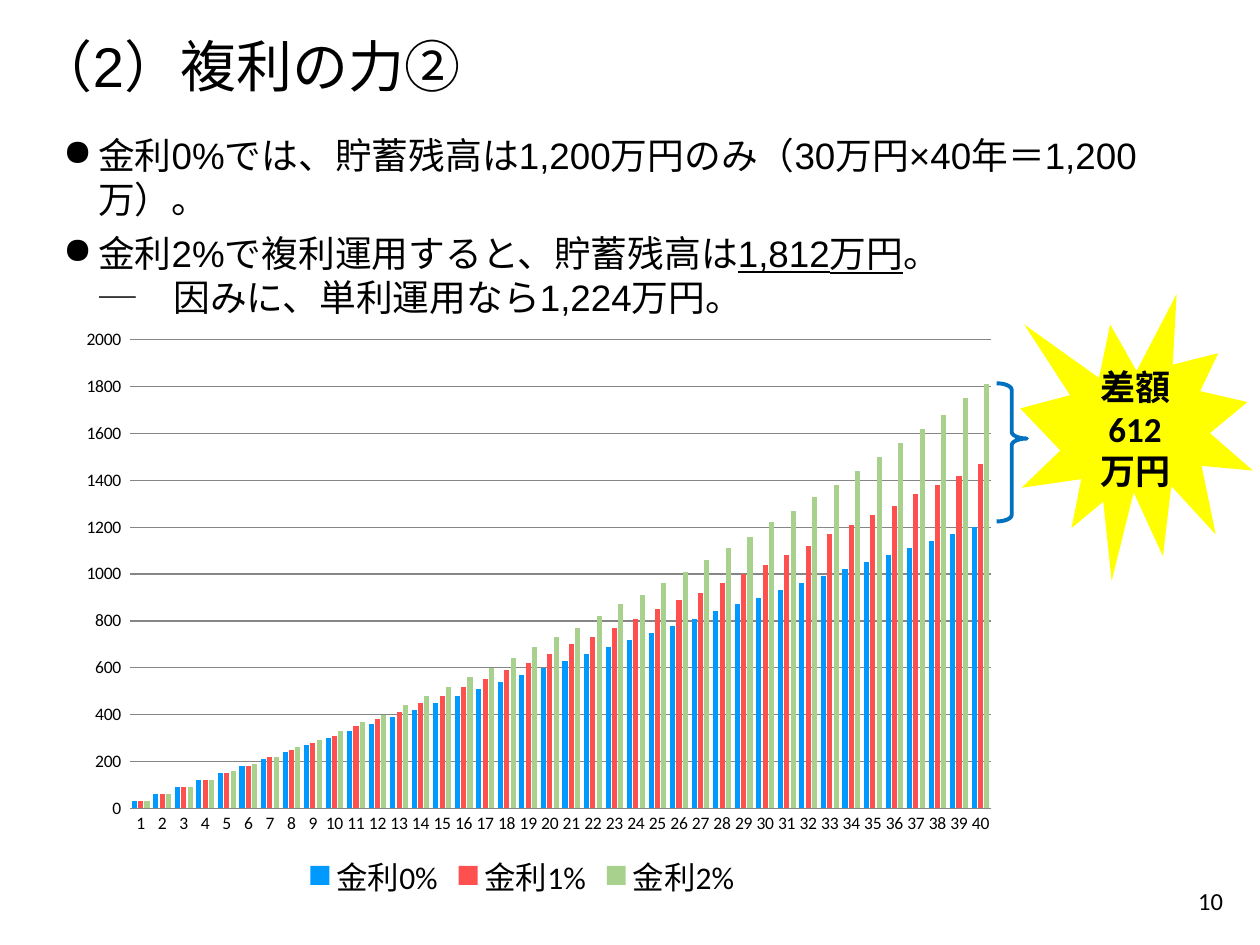
import pptx
import pptx.util
import pptx.dml.color
import pptx.chart.data
import pptx.enum.chart
import pptx.enum.shapes
import pptx.enum.text
import pptx.oxml
from pptx.oxml.ns import nsdecls

Pt = pptx.util.Pt
ALIGN = pptx.enum.text.PP_ALIGN
SHAPE = pptx.enum.shapes.MSO_SHAPE
CHART = pptx.enum.chart
BLACK = "000000"
YEARS = range(1, 41)
YEARLY_SAVING = 30
RATE_COLORS = {0: "0099FF", 1: "FF5050", 2: "A9D18E"}


def rgb(color):
    """Turn a hex string into a colour."""
    return pptx.dml.color.RGBColor.from_string(color)


def style(font, name, size, bold=False):
    """Set the face, size and weight of black text."""
    font.name = name
    font.size = Pt(size)
    font.bold = bold
    font.color.rgb = rgb(BLACK)


def add_text(slide, box, lines, name, size, align=ALIGN.LEFT):
    """Place a wrapped, middle-anchored text box and return its paragraphs."""
    frame = slide.shapes.add_textbox(*map(Pt, box)).text_frame
    frame.word_wrap = True
    frame.vertical_anchor = pptx.enum.text.MSO_ANCHOR.MIDDLE
    frame.text = "\n".join(lines)
    for paragraph in frame.paragraphs:
        paragraph.alignment = align
        for run in paragraph.runs:
            style(run.font, name, size)
    return frame.paragraphs


def indent(paragraph, margin, hanging=0, bullet=None):
    """Indent a paragraph and give it an optional bullet."""
    properties = paragraph._p.get_or_add_pPr()
    properties.set("marL", str(Pt(margin)))
    properties.set("indent", str(-Pt(hanging)))
    if bullet:
        properties.append(pptx.oxml.parse_xml(
            f'<a:buChar {nsdecls("a")} char="{bullet}"/>'))


def add_points(slide, box):
    """Place the two bulleted findings and the side remark."""
    zero, compound, simple = add_text(slide, box, [
        "金利0%では、貯蓄残高は1,200万円のみ（30万円×40年＝1,200万）。",
        "金利2%で複利運用すると、貯蓄残高は",
        "─　因みに、単利運用なら1,224万円。",
    ], "Arial", 21)
    for text, underlined in (("1,812万円", True), ("。", False)):
        run = compound.add_run()
        run.text = text
        style(run.font, "Arial", 21)
        run.font.underline = underlined
    zero.space_after = Pt(6)
    for paragraph in (zero, compound):
        indent(paragraph, 27, 20, "●")
    indent(simple, 28)


def balance(rate, year):
    """Return the savings after some years of compounding, to the nearest ten."""
    growth = 1 + rate / 100
    return round(sum(YEARLY_SAVING * growth ** n for n in range(year)), -1)


def set_plot_area(chart, left, top, width, height):
    """Fix the inner plot area as fractions of the chart."""
    area = chart._chartSpace.chart.plotArea
    for layout in area.findall(pptx.oxml.ns.qn("c:layout")):
        area.remove(layout)
    places = "".join(f'<c:{tag} val="{value}"/>' for tag, value in
                     zip("xywh", (left, top, width, height)))
    area.insert(0, pptx.oxml.parse_xml(
        f'<c:layout {nsdecls("c")}><c:manualLayout><c:layoutTarget val="inner"/>'
        f'<c:xMode val="edge"/><c:yMode val="edge"/>{places}'
        '</c:manualLayout></c:layout>'))


def add_balance_chart(slide, box):
    """Place the column chart of balances by year and interest rate."""
    data = pptx.chart.data.CategoryChartData()
    data.categories = [str(year) for year in YEARS]
    for rate in RATE_COLORS:
        data.add_series(f"金利{rate}%", [balance(rate, year) for year in YEARS])
    chart = slide.shapes.add_chart(
        CHART.XL_CHART_TYPE.COLUMN_CLUSTERED, *map(Pt, box), data).chart
    style(chart.font, "Calibri", 10)
    chart.has_title = False
    chart.has_legend = True
    chart.legend.position = CHART.XL_LEGEND_POSITION.BOTTOM
    chart.legend.include_in_layout = False
    style(chart.legend.font, "Calibri", 18)

    columns = chart.plots[0]
    columns.vary_by_categories = False
    columns.gap_width = 75
    columns.overlap = -25
    for series, color in zip(columns.series, RATE_COLORS.values()):
        series.format.fill.solid()
        series.format.fill.fore_color.rgb = rgb(color)

    years, amounts = chart.category_axis, chart.value_axis
    for axis in (years, amounts):
        axis.major_tick_mark = CHART.XL_TICK_MARK.NONE
    years.format.line.color.rgb = rgb("868686")
    amounts.format.line.fill.background()
    amounts.minimum_scale, amounts.maximum_scale = 0, 2000
    amounts.major_unit = 200
    amounts.major_gridlines.format.line.color.rgb = rgb("868686")
    amounts.tick_labels.number_format = r"0_);[Red]\(0\)"
    amounts.tick_labels.number_format_is_linked = False
    set_plot_area(chart, 0.09, 0.06, 0.9, 0.78)


def add_gap_brace(slide, box):
    """Place the brace that spans the gap between the last balances."""
    brace = slide.shapes.add_shape(SHAPE.RIGHT_BRACE, *map(Pt, box))
    brace.shadow.inherit = False
    brace.adjustments[0], brace.adjustments[1] = 0.22, 0.4
    brace.fill.background()
    brace.line.color.rgb = rgb("0070C0")
    brace.line.width = Pt(2.25)


def add_gap_burst(slide, box):
    """Place the burst that states the difference."""
    burst = slide.shapes.add_shape(SHAPE.EXPLOSION1, *map(Pt, box))
    burst.shadow.inherit = False
    burst.fill.solid()
    burst.fill.fore_color.rgb = rgb("FFFF00")
    burst.line.fill.background()
    frame = burst.text_frame
    frame.vertical_anchor = pptx.enum.text.MSO_ANCHOR.MIDDLE
    frame.text = "差額\n612\n万円"
    for paragraph in frame.paragraphs:
        paragraph.alignment = ALIGN.CENTER
        style(paragraph.runs[0].font, "Calibri", 20, bold=True)


def main():
    """Build the slide and save it."""
    deck = pptx.Presentation()
    deck.slide_width, deck.slide_height = Pt(720), Pt(540)
    slide = deck.slides.add_slide(deck.slide_layouts[6])
    add_gap_brace(slide, (569.5, 219, 17.3, 79))
    add_gap_burst(slide, (583, 168, 133, 164))
    add_balance_chart(slide, (25, 173.5, 547, 343.5))
    add_text(slide, (544, 500, 162, 29), ["10"], "Calibri", 14, ALIGN.RIGHT)
    add_points(slide, (22, 84, 675, 90))
    add_text(slide, (14, 14, 652, 46), ["（2）複利の力②"], "Arial", 32)
    deck.save("out.pptx")


if __name__ == "__main__":
    main()
